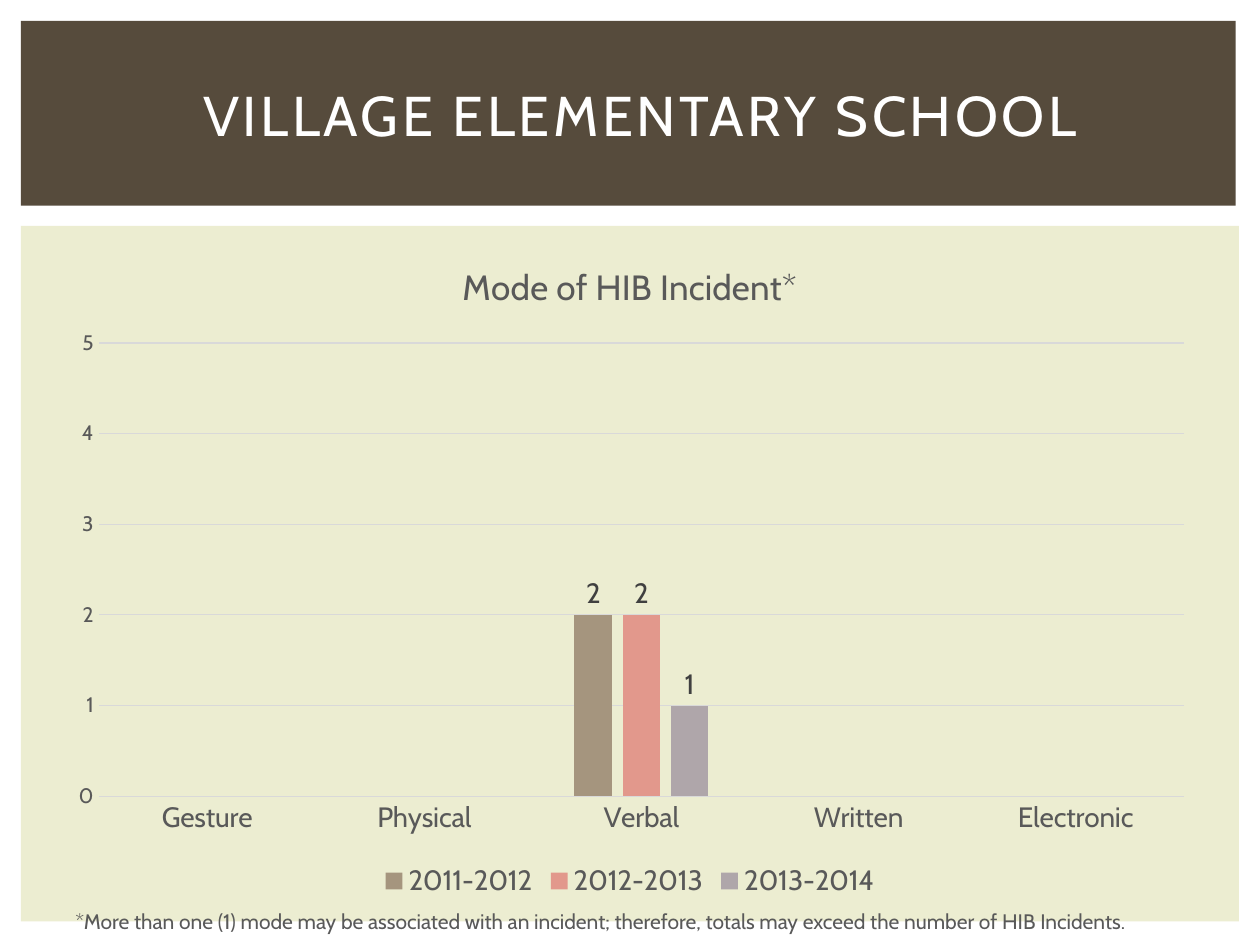
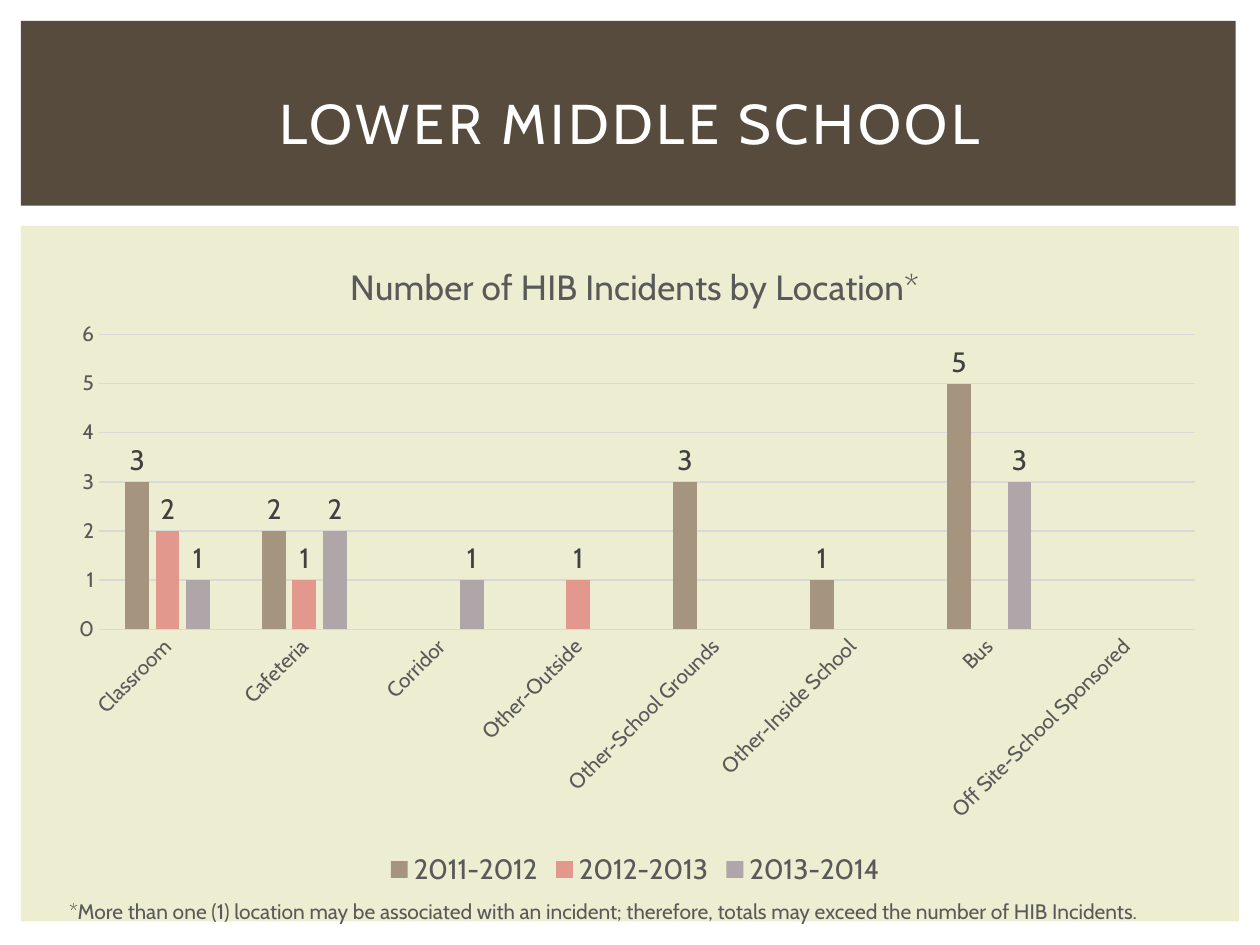
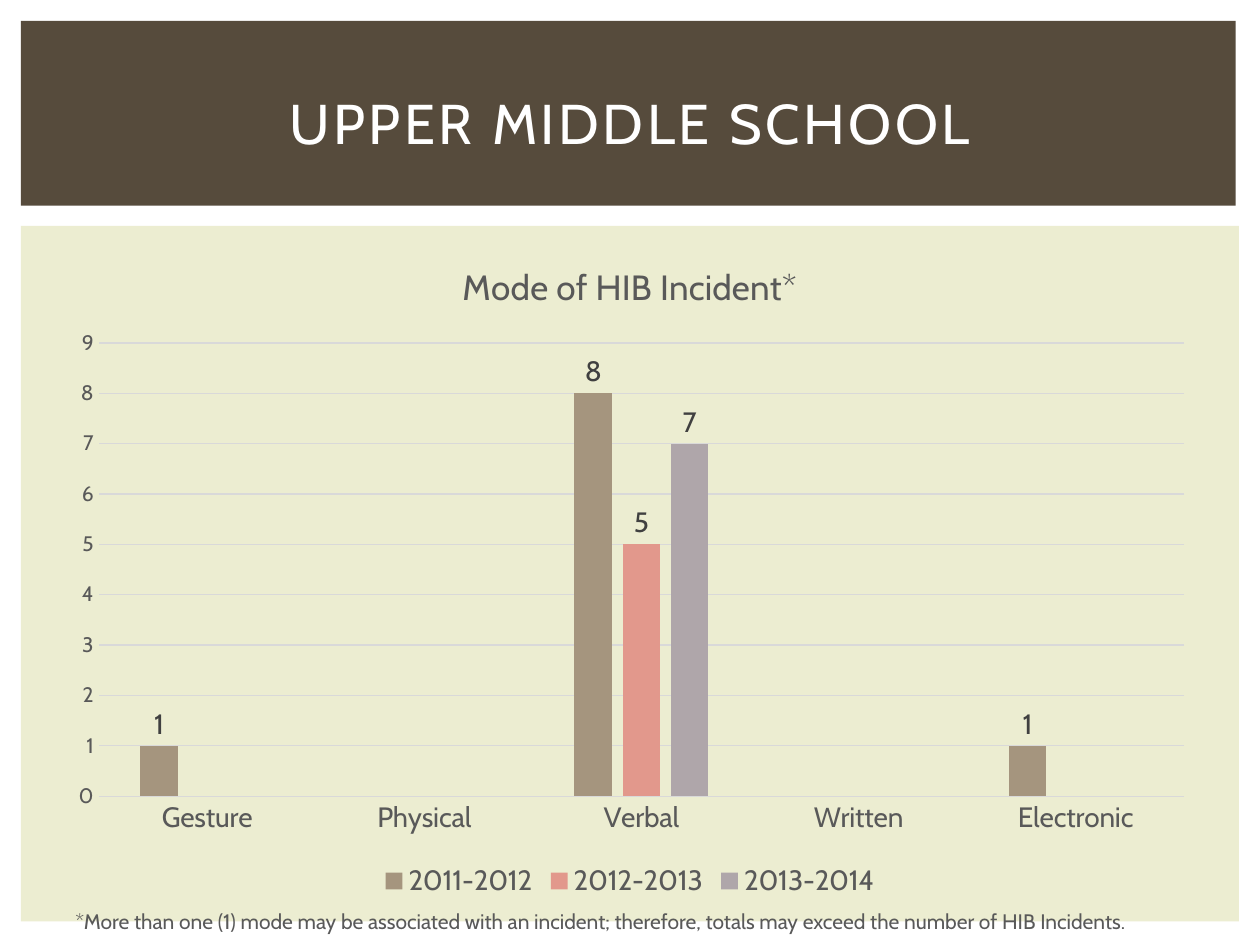
from lxml import etree
from pptx import Presentation
from pptx.chart.data import CategoryChartData
from pptx.dml.color import RGBColor
from pptx.enum.chart import XL_CHART_TYPE, XL_LABEL_POSITION, XL_LEGEND_POSITION, XL_TICK_MARK
from pptx.enum.shapes import MSO_SHAPE
from pptx.enum.text import MSO_ANCHOR, MSO_AUTO_SIZE, PP_ALIGN
from pptx.oxml.ns import qn
from pptx.util import Inches, Pt

CLUSTERED = XL_CHART_TYPE.COLUMN_CLUSTERED
OUTSIDE_END = XL_LABEL_POSITION.OUTSIDE_END
LEGEND_BOTTOM = XL_LEGEND_POSITION.BOTTOM
NO_TICK = XL_TICK_MARK.NONE
RECTANGLE = MSO_SHAPE.RECTANGLE
MIDDLE = MSO_ANCHOR.MIDDLE
NO_FIT, GROW = MSO_AUTO_SIZE.NONE, MSO_AUTO_SIZE.SHAPE_TO_FIT_TEXT
CENTER, LEFT = PP_ALIGN.CENTER, PP_ALIGN.LEFT

# Shared style
FONT = "Cabin"
WHITE = RGBColor(0xFF, 0xFF, 0xFF)
BLACK = RGBColor(0x00, 0x00, 0x00)
BROWN = RGBColor(0x56, 0x4B, 0x3C)
CREAM = RGBColor(0xEC, 0xED, 0xD1)
GRAY = RGBColor(0x59, 0x59, 0x59)
DARK_GRAY = RGBColor(0x40, 0x40, 0x40)
GRID_GRAY = RGBColor(0xD9, 0xD9, 0xD9)
YEAR_COLORS = {
    "2011-2012": RGBColor(0xA5, 0x95, 0x7E),
    "2012-2013": RGBColor(0xE2, 0x98, 0x8C),
    "2013-2014": RGBColor(0xAF, 0xA6, 0xAA),
}

# Grid of the slide, and boxes as (column, row, columns, rows)
COLUMNS, ROWS = 120, 90
BODY_BAND = (2, 21.5, 116, 66.25)
TITLE_BAND = (2, 2, 115.7, 17.6)
TITLE_BOX = (5, 4.7, 110, 13.8)

# Slide content
MODES = ["Gesture", "Physical", "Verbal", "Written", "Electronic"]
LOCATIONS = ["Classroom", "Cafeteria", "Corridor", "Other-Outside", "Other-School Grounds",
             "Other-Inside School", "Bus", "Off Site-School Sponsored"]
MODE_STYLE = dict(
    chart_title="Mode of HIB Incident*", categories=MODES, subject="mode",
    chart_box=(5, 22.5, 110, 63.5), note_box=(6, 85.9, 113, 3.6),
    category_size=16, plot_top=0.16, plot_height=0.68)
LOCATION_STYLE = dict(
    chart_title="Number of HIB Incidents by Location*", categories=LOCATIONS, subject="location",
    chart_box=(5, 22.5, 111, 62.4), note_box=(5.4, 85, 113, 3.6),
    category_size=12, plot_top=0.15, plot_height=0.45, slanted=True)
SCHOOLS = [
    dict(MODE_STYLE, school="VILLAGE ELEMENTARY SCHOOL", title_box=(6, 4, 110, 13.8), maximum=5,
         counts=[[None, None, 2, None, None],
                 [None, None, 2, None, None],
                 [None, None, 1, None, None]]),
    dict(LOCATION_STYLE, school="LOWER MIDDLE SCHOOL", maximum=6,
         counts=[[3, 2, None, None, 3, 1, 5, None],
                 [2, 1, None, 1, None, None, None, None],
                 [1, 2, 1, None, None, None, 3, None]]),
    dict(MODE_STYLE, school="UPPER MIDDLE SCHOOL", maximum=9,
         counts=[[1, None, 8, None, 1],
                 [None, None, 5, None, None],
                 [None, None, 7, None, None]]),
]


class Deck:
    """Holds the presentation, its style and the current slide."""

    def __init__(self):
        self.presentation = Presentation()
        self.presentation.slide_width = Inches(10)
        self.presentation.slide_height = Inches(7.5)
        self.layout = self.presentation.slide_layouts.get_by_name("Title Only")
        self.slide = None

    def new_slide(self):
        self.slide = self.presentation.slides.add_slide(self.layout)

    def place(self, box):
        column, row, columns, rows = box
        width = self.presentation.slide_width / COLUMNS
        height = self.presentation.slide_height / ROWS
        return [int(column * width), int(row * height), int(columns * width), int(rows * height)]

    def style_font(self, font, size, color):
        font.name, font.size, font.bold = FONT, Pt(size), False
        font.color.rgb = color

    def add_text(self, paragraph, text, size, color, align):
        paragraph.alignment = align
        run = paragraph.add_run()
        run.text = text
        self.style_font(run.font, size, color)
        return run

    def layout_band(self, box, color, shape_id):
        """Draw a band and move it behind everything on the shared layout."""
        band = self.slide.shapes.add_shape(RECTANGLE, *self.place(box))
        band.shadow.inherit = False
        band.fill.solid()
        band.fill.fore_color.rgb = color
        band.line.fill.background()
        band.element.xpath("./p:nvSpPr/p:cNvPr")[0].set("id", str(shape_id))
        self.layout.shapes.element.insert(2, band.element)

    def title(self, text, box):
        title = self.slide.shapes.title
        title.left, title.top, title.width, title.height = self.place(box)
        frame = title.text_frame
        frame.vertical_anchor, frame.word_wrap, frame.auto_size = MIDDLE, True, NO_FIT
        run = self.add_text(frame.paragraphs[0], text, 32, WHITE, CENTER)
        run._r.get_or_add_rPr().set("spc", "200")

    def note(self, text, box):
        frame = self.slide.shapes.add_textbox(*self.place(box)).text_frame
        frame.word_wrap, frame.auto_size = True, GROW
        self.add_text(frame.paragraphs[0], text, 12, GRAY, LEFT)

    def axis(self, axis, size):
        axis.major_tick_mark = axis.minor_tick_mark = NO_TICK
        self.style_font(axis.tick_labels.font, size, GRAY)

    def grid_line(self, line):
        line.color.rgb = GRID_GRAY
        line.width = Pt(0.75)

    def plot_area(self, chart, top, height):
        """Fix the inner plot area as shares of the chart."""
        area = chart.element.find(".//" + qn("c:plotArea"))
        for old_layout in area.findall(qn("c:layout")):
            area.remove(old_layout)
        layout = etree.Element(qn("c:layout"))
        manual = etree.SubElement(layout, qn("c:manualLayout"))
        settings = dict(layoutTarget="inner", xMode="edge", yMode="edge",
                        x=0.04, y=top, w=0.94, h=height)
        for name, value in settings.items():
            etree.SubElement(manual, qn("c:" + name)).set("val", str(value))
        area.insert(0, layout)

    def column_chart(self, box, title, categories, counts, maximum, category_size,
                     plot_top, plot_height, slanted):
        data = CategoryChartData(number_format="General")
        data.categories = categories
        for year, values in zip(YEAR_COLORS, counts):
            data.add_series(year, values)
        chart = self.slide.shapes.add_chart(CLUSTERED, *self.place(box), data).chart
        self.style_font(chart.font, 10, BLACK)
        chart.has_title = True
        self.add_text(chart.chart_title.text_frame.paragraphs[0], title, 20, GRAY, CENTER)

        # Legend
        chart.has_legend = True
        chart.legend.position = LEGEND_BOTTOM
        chart.legend.include_in_layout = False
        self.style_font(chart.legend.font, 16, GRAY)

        # Axes
        category_axis, value_axis = chart.category_axis, chart.value_axis
        self.axis(category_axis, category_size)
        self.grid_line(category_axis.format.line)
        if slanted:
            chart.element.xpath(".//c:catAx/c:txPr/a:bodyPr")[0].set("rot", "-2700000")
        self.axis(value_axis, 12)
        value_axis.format.line.fill.background()
        value_axis.minimum_scale, value_axis.maximum_scale = 0, maximum
        value_axis.major_unit = 1
        self.grid_line(value_axis.major_gridlines.format.line)

        # Columns and their labels
        plot = chart.plots[0]
        plot.gap_width, plot.overlap, plot.vary_by_categories = 219, -27, False
        for series, color in zip(plot.series, YEAR_COLORS.values()):
            series.format.fill.solid()
            series.format.fill.fore_color.rgb = color
            series.invert_if_negative = False
            labels = series.data_labels
            labels.show_value, labels.position = True, OUTSIDE_END
            self.style_font(labels.font, 16, DARK_GRAY)
        self.plot_area(chart, plot_top, plot_height)


def main():
    deck = Deck()
    for number, school in enumerate(SCHOOLS):
        deck.new_slide()
        if number == 0:
            deck.layout_band(TITLE_BAND, BROWN, 101)
            deck.layout_band(BODY_BAND, CREAM, 102)
        deck.title(school["school"], school.get("title_box", TITLE_BOX))
        deck.column_chart(
            school["chart_box"], school["chart_title"], school["categories"], school["counts"],
            school["maximum"], school["category_size"], school["plot_top"],
            school["plot_height"], school.get("slanted", False))
        deck.note(f"*More than one (1) {school['subject']} may be associated with an incident; "
                  "therefore, totals may exceed the number of HIB Incidents.", school["note_box"])
    deck.presentation.save("out.pptx")


if __name__ == "__main__":
    main()
